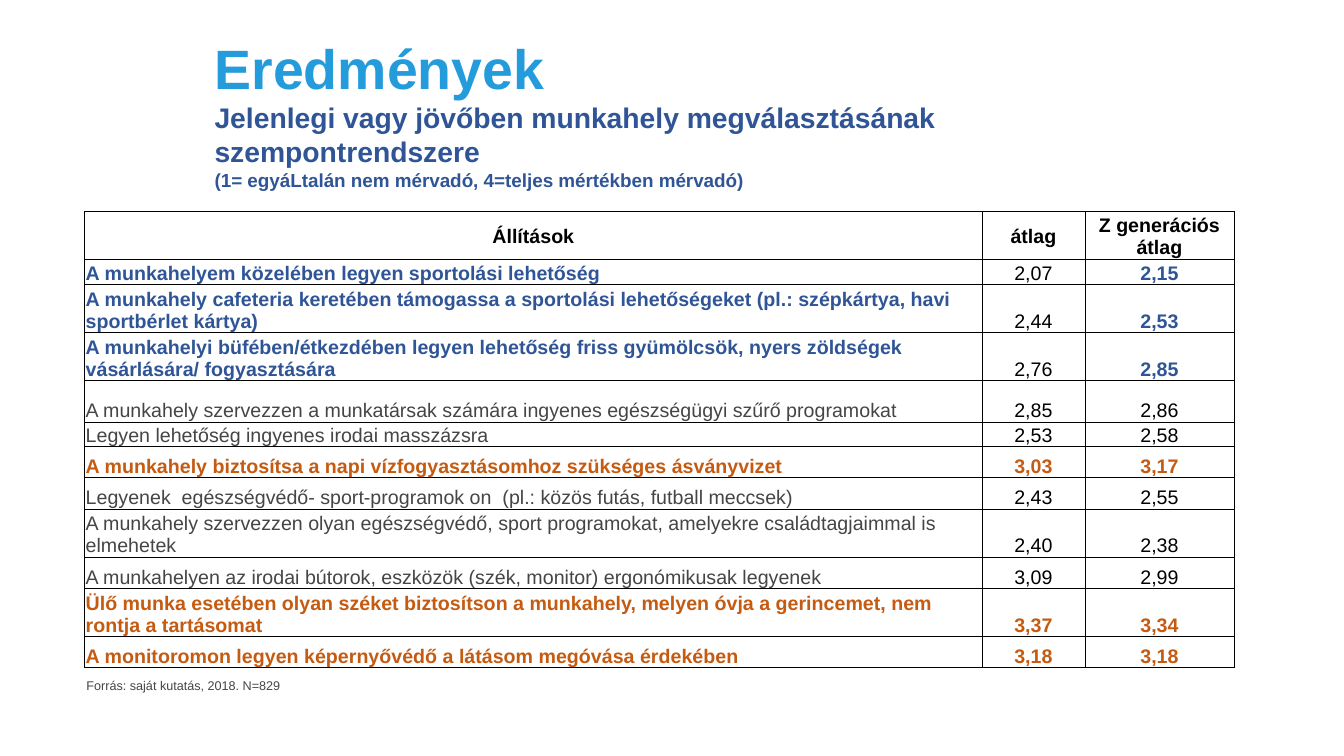
import pptx
import pptx.enum.text
import pptx.oxml
import pptx.oxml.ns
import pptx.util
from pptx.dml.color import RGBColor
from pptx.util import Inches

COLORS = {"heading": "249CDC", "blue": "2F5597", "orange": "C55A11",
          "gray": "454545", "black": "000000"}
ANCHOR = pptx.enum.text.MSO_ANCHOR
ALIGN = pptx.enum.text.PP_ALIGN

TITLE_LINES = [
    ("Eredmények", 39.6, "heading"),
    ("Jelenlegi vagy jövőben munkahely megválasztásának szempontrendszere", 20.2, "blue"),
    ("(1= egyáLtalán nem mérvadó, 4=teljes mértékben mérvadó)", 13.5, "blue"),
]
HEADERS = ["Állítások", "átlag", "Z generációs átlag"]
COLUMN_WIDTHS = [8.9, 1.02, 1.48]
HEADER_HEIGHT = 0.41

# Colours of statement, average and Z generation average for each kind of row
ROW_STYLES = {
    "plain": ["gray", "black", "black"],
    "higher": ["blue", "black", "blue"],
    "top": ["orange", "orange", "orange"],
}
BOLD_COLORS = {"blue", "orange"}

ROWS = [
    ("higher", 0.21, "A munkahelyem közelében legyen sportolási lehetőség", "2,07", "2,15"),
    ("higher", 0.41, "A munkahely cafeteria keretében támogassa a sportolási lehetőségeket "
     "(pl.: szépkártya, havi sportbérlet kártya)", "2,44", "2,53"),
    ("higher", 0.41, "A munkahelyi büfében/étkezdében legyen lehetőség friss gyümölcsök, "
     "nyers zöldségek vásárlására/ fogyasztására", "2,76", "2,85"),
    ("plain", 0.41, "A munkahely szervezzen a munkatársak számára ingyenes egészségügyi "
     "szűrő programokat", "2,85", "2,86"),
    ("plain", 0.21, "Legyen lehetőség ingyenes irodai masszázsra", "2,53", "2,58"),
    ("top", 0.31, "A munkahely biztosítsa a napi vízfogyasztásomhoz szükséges ásványvizet",
     "3,03", "3,17"),
    ("plain", 0.31, "Legyenek  egészségvédő- sport-programok on  (pl.: közös futás, "
     "futball meccsek)", "2,43", "2,55"),
    ("plain", 0.41, "A munkahely szervezzen olyan egészségvédő, sport programokat, amelyekre "
     "családtagjaimmal is elmehetek", "2,40", "2,38"),
    ("plain", 0.31, "A munkahelyen az irodai bútorok, eszközök (szék, monitor) "
     "ergonómikusak legyenek", "3,09", "2,99"),
    ("top", 0.41, "Ülő munka esetében olyan széket biztosítson a munkahely, melyen óvja a "
     "gerincemet, nem rontja a tartásomat", "3,37", "3,34"),
    ("top", 0.31, "A monitoromon legyen képernyővédő a látásom megóvása érdekében",
     "3,18", "3,18"),
]


def add_run(paragraph, text, size, color, bold=False):
    run = paragraph.add_run()
    run.text = text
    run.font.name = "Arial"
    run.font.size = pptx.util.Pt(size)
    run.font.bold = bold
    run.font.color.rgb = RGBColor.from_string(COLORS[color])


def add_title(slide, left, top, width, height):
    shape = slide.shapes.add_textbox(Inches(left), Inches(top), Inches(width), Inches(height))
    frame = shape.text_frame
    frame.word_wrap = True
    frame.vertical_anchor = ANCHOR.MIDDLE
    frame.margin_bottom = Inches(0.4)
    paragraph = frame.paragraphs[0]
    for index, (text, size, color) in enumerate(TITLE_LINES):
        if index:
            paragraph.add_line_break()
        add_run(paragraph, text, size, color, bold=True)


def add_borders(cell):
    properties = cell._tc.get_or_add_tcPr()
    for position, side in enumerate(("lnL", "lnR", "lnT", "lnB")):
        border = pptx.oxml.parse_xml(
            f'<a:{side} {pptx.oxml.ns.nsdecls("a")} w="{pptx.util.Pt(0.5)}"><a:solidFill>'
            f'<a:srgbClr val="{COLORS["black"]}"/></a:solidFill></a:{side}>')
        properties.insert(position, border)


def fill_cell(cell, text, color, bold, anchor, alignment):
    cell.fill.background()
    cell.vertical_anchor = anchor
    cell.margin_left = cell.margin_right = cell.margin_top = Inches(0.01)
    cell.margin_bottom = 0
    paragraph = cell.text_frame.paragraphs[0]
    paragraph.alignment = alignment
    add_run(paragraph, text, 14, color, bold)
    add_borders(cell)


def add_results_table(slide, left, top, width, height):
    frame = slide.shapes.add_table(len(ROWS) + 1, len(HEADERS), Inches(left), Inches(top),
                                   Inches(width), Inches(height))
    table = frame.table
    table.first_row = True
    table.horz_banding = False
    for column, column_width in zip(table.columns, COLUMN_WIDTHS):
        column.width = Inches(column_width)

    table.rows[0].height = Inches(HEADER_HEIGHT)
    for index, text in enumerate(HEADERS):
        fill_cell(table.cell(0, index), text, "black", True, ANCHOR.MIDDLE, ALIGN.CENTER)

    for row_index, (style, row_height, *texts) in enumerate(ROWS, start=1):
        table.rows[row_index].height = Inches(row_height)
        for index, (text, color) in enumerate(zip(texts, ROW_STYLES[style])):
            fill_cell(table.cell(row_index, index), text, color, color in BOLD_COLORS,
                      ANCHOR.BOTTOM, ALIGN.CENTER if index else ALIGN.LEFT)


def add_source_note(slide, left, top, width, height):
    shape = slide.shapes.add_textbox(Inches(left), Inches(top), Inches(width), Inches(height))
    shape.text_frame.word_wrap = False
    add_run(shape.text_frame.paragraphs[0], "Forrás: saját kutatás, 2018. N=829", 9, "gray")


def main():
    presentation = pptx.Presentation()
    presentation.slide_width = Inches(13.33)
    presentation.slide_height = Inches(7.5)
    slide = presentation.slides.add_slide(presentation.slide_layouts[6])
    add_title(slide, 2.03, 0.68, 9.46, 1.22)
    add_source_note(slide, 0.76, 6.68, 2.14, 0.25)
    add_results_table(slide, 0.84, 2.1, sum(COLUMN_WIDTHS),
                      HEADER_HEIGHT + sum(row[1] for row in ROWS))
    presentation.save("out.pptx")


if __name__ == "__main__":
    main()
